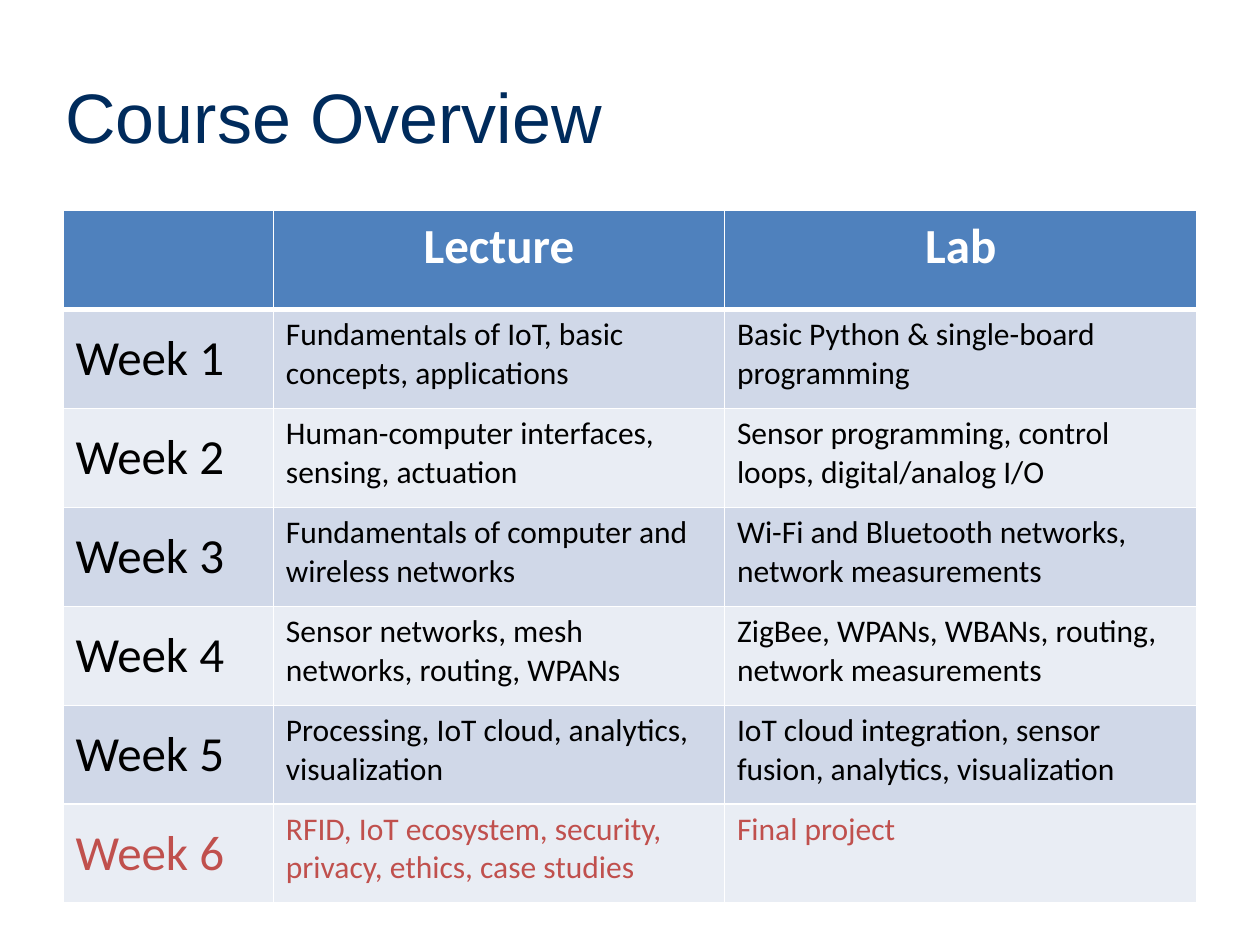
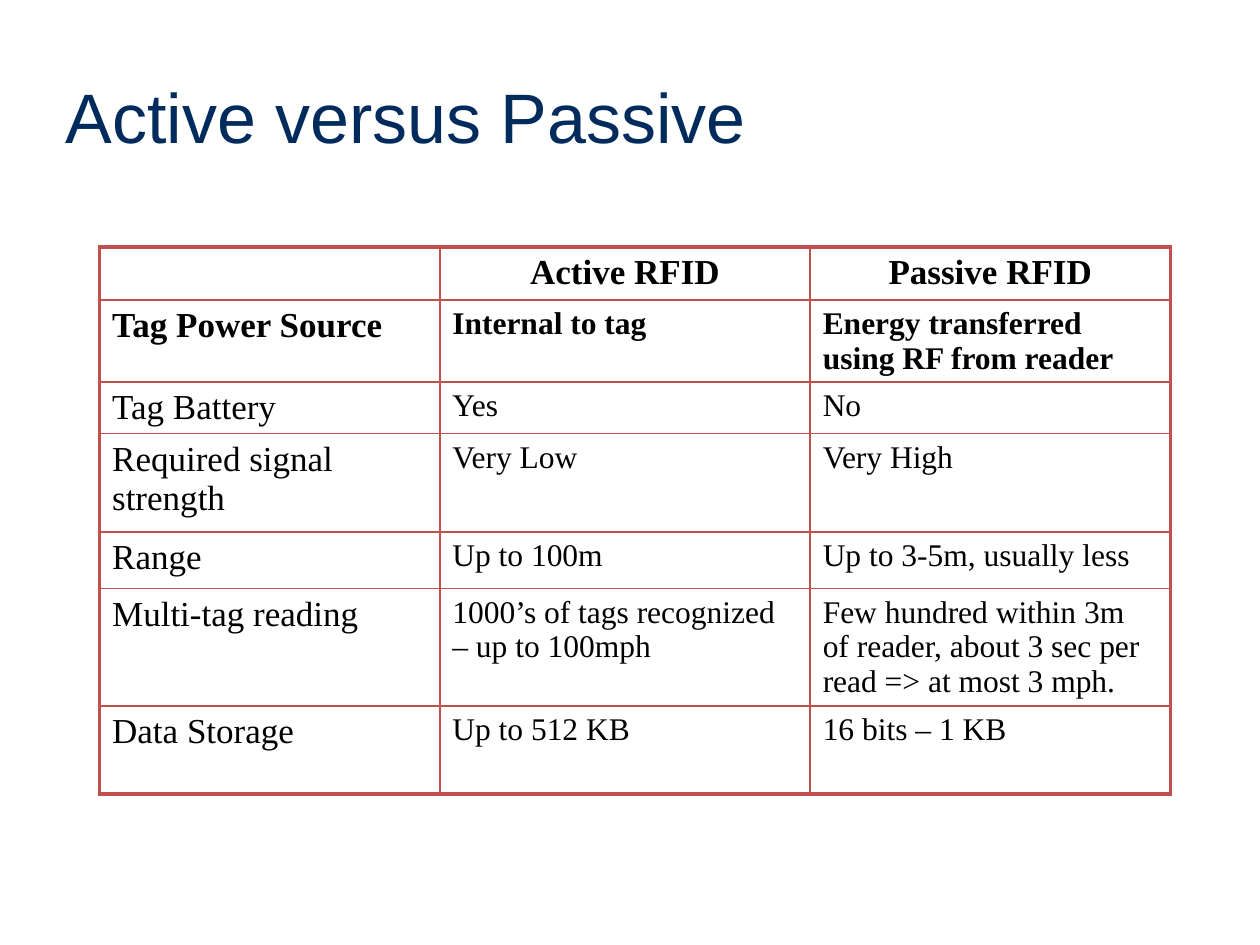
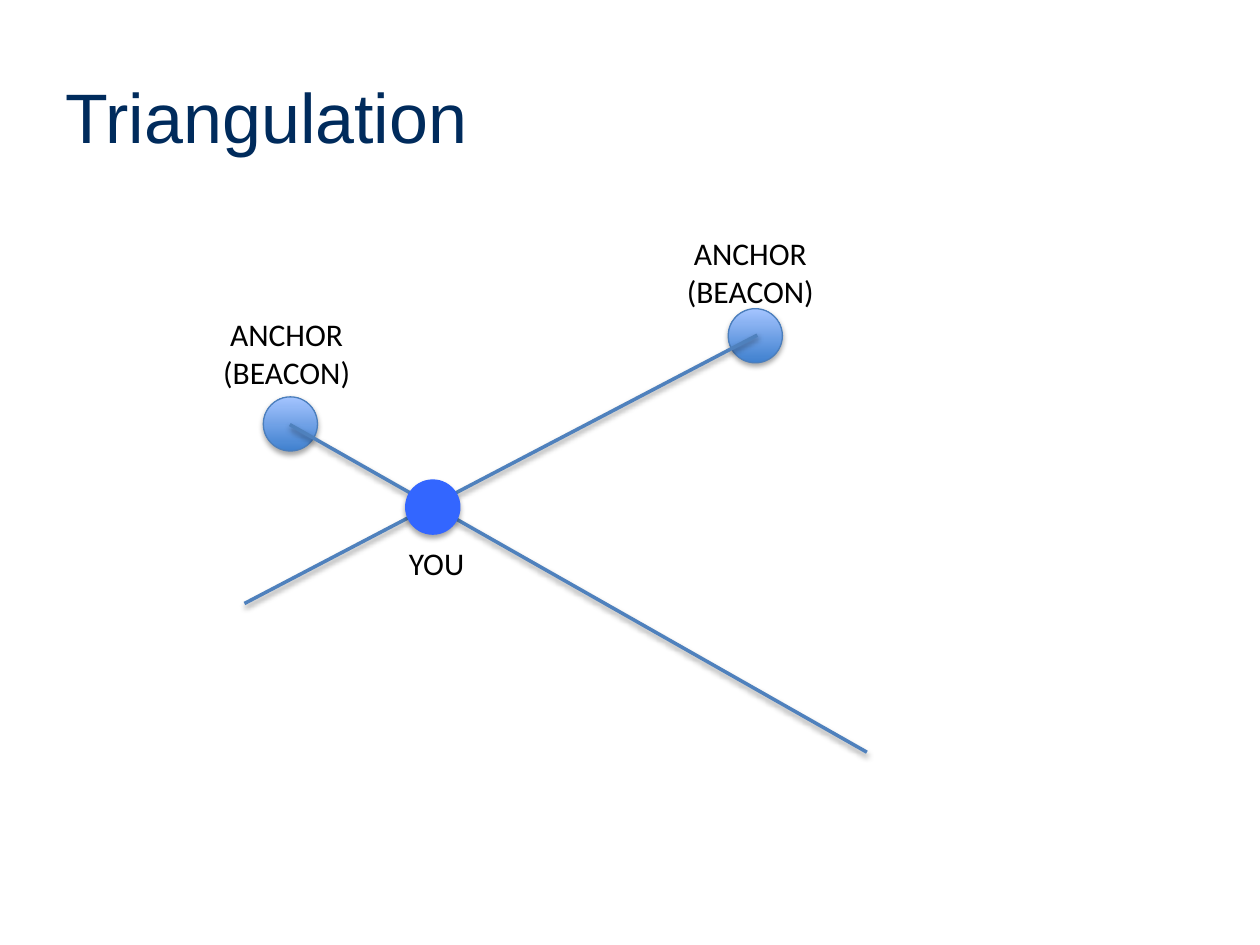
from dataclasses import dataclass

from lxml.etree import SubElement
from pptx import Presentation
from pptx.dml.color import RGBColor
from pptx.enum.shapes import MSO_CONNECTOR, MSO_SHAPE
from pptx.enum.text import MSO_ANCHOR, MSO_AUTO_SIZE, PP_ALIGN
from pptx.oxml.ns import qn
from pptx.util import Inches, Pt

COLORS = {
    "title": "002B5C",
    "text": "000000",
    "white": "FFFFFF",
    "accent": "4F81BD",
    "highlight": "C0504D",
    "band_dark": "D0D8E8",
    "band_light": "E9EDF4",
    "beacon_bottom": "3F80CE",
    "beacon_top": "A4C4FF",
    "beacon_line": "4B7EBC",
    "you": "3366FF",
}
TITLE_ONLY = 5
DOT_SIZE = 0.43

OVERVIEW = [
    ("", "Lecture", "Lab"),
    ("Week 1", "Fundamentals of IoT, basic concepts, applications",
     "Basic Python & single-board programming"),
    ("Week 2", "Human-computer interfaces, sensing, actuation",
     "Sensor programming, control loops, digital/analog I/O"),
    ("Week 3", "Fundamentals of computer and wireless networks",
     "Wi-Fi and Bluetooth networks, network measurements"),
    ("Week 4", "Sensor networks, mesh networks, routing, WPANs",
     "ZigBee, WPANs, WBANs, routing, network measurements"),
    ("Week 5", "Processing, IoT cloud, analytics, visualization",
     "IoT cloud integration, sensor fusion, analytics, visualization"),
    ("Week 6", "RFID, IoT ecosystem, security, privacy, ethics, case studies",
     "Final project"),
]
COMPARISON = [
    ("", "Active RFID", "Passive RFID"),
    ("Tag Power Source", "Internal to tag", "Energy transferred using RF from reader"),
    ("Tag Battery", "Yes", "No"),
    ("Required signal strength", "Very Low", "Very High"),
    ("Range", "Up to 100m", "Up to 3-5m, usually less"),
    ("Multi-tag reading", "1000’s of tags recognized – up to 100mph",
     "Few hundred within 3m of reader, about 3 sec per read => at most 3 mph."),
    ("Data Storage", "Up to 512 KB", "16 bits – 1 KB"),
]


@dataclass
class TableDesign:
    left: float
    top: float
    columns: list[float]
    rows: list[float]
    font: str
    heading_size: int
    border: str
    outer_width: float
    header_rule: float
    bold_rows: int
    label_anchor: MSO_ANCHOR
    header_text: str = "text"
    header_fill: str | None = None
    bands: tuple[str, ...] = ()
    highlighted_row: int | None = None


@dataclass
class Beacon:
    left: float
    top: float
    label_left: float
    label_top: float
    line_start: tuple[float, float]
    line_end: tuple[float, float]


OVERVIEW_DESIGN = TableDesign(
    left=0.5, top=1.67, columns=[1.67, 3.58, 3.75], rows=[5.5 / 7] * 7,
    font="Calibri", heading_size=28, border="white", outer_width=1,
    header_rule=3, bold_rows=1, label_anchor=MSO_ANCHOR.MIDDLE,
    header_text="white", header_fill="accent",
    bands=("band_dark", "band_light"), highlighted_row=6,
)
COMPARISON_DESIGN = TableDesign(
    left=0.79, top=1.96, columns=[2.7, 2.94, 2.86],
    rows=[0.42, 0.65, 0.37, 0.78, 0.45, 0.93, 0.7],
    font="Times New Roman", heading_size=20, border="highlight", outer_width=2.25,
    header_rule=1, bold_rows=2, label_anchor=MSO_ANCHOR.TOP,
)
BEACONS = [
    Beacon(2.09, 3.15, 1.55, 2.45, (2.3, 3.37), (6.88, 5.97)),
    Beacon(5.78, 2.45, 5.23, 1.81, (1.94, 4.79), (6.01, 2.66)),
]


def color(name: str) -> RGBColor:
    return RGBColor.from_string(COLORS[name])


def write(paragraph, text: str, size: float, font: str, color_name: str,
          bold: bool = False, align=PP_ALIGN.LEFT) -> None:
    paragraph.alignment = align
    run = paragraph.add_run()
    run.text = text
    run.font.size = Pt(size)
    run.font.name = font
    run.font.bold = bold
    run.font.color.rgb = color(color_name)


def add_titled_slide(presentation, text: str):
    slide = presentation.slides.add_slide(presentation.slide_layouts[TITLE_ONLY])
    title = slide.shapes.title
    title.left, title.top = Inches(0.42), Inches(0.42)
    title.width, title.height = Inches(9.08), Inches(1)
    title.text_frame.vertical_anchor = MSO_ANCHOR.MIDDLE
    write(title.text_frame.paragraphs[0], text, 40, "Arial", "title")
    return slide


def set_borders(cell, color_name: str, widths: dict[str, float]) -> None:
    properties = cell._tc.get_or_add_tcPr()
    for side, width in widths.items():
        line = SubElement(properties, qn(f"a:ln{side}"), w=str(Pt(width)))
        fill = SubElement(line, qn("a:solidFill"))
        SubElement(fill, qn("a:srgbClr"), val=COLORS[color_name])


def style_cell(cell, row: int, column: int, design: TableDesign) -> None:
    last_row, last_column = len(design.rows) - 1, len(design.columns) - 1
    top_width = design.header_rule if row == 1 else 1
    bottom_width = design.header_rule if row == 0 else 1
    set_borders(cell, design.border, {
        "L": design.outer_width if column == 0 else 1,
        "R": design.outer_width if column == last_column else 1,
        "T": design.outer_width if row == 0 else top_width,
        "B": design.outer_width if row == last_row else bottom_width,
    })
    fill_name = design.header_fill
    if row > 0 and design.bands:
        fill_name = design.bands[(row - 1) % len(design.bands)]
    if fill_name:
        cell.fill.solid()
        cell.fill.fore_color.rgb = color(fill_name)
    else:
        cell.fill.background()
    if row > 0 and column == 0:
        cell.vertical_anchor = design.label_anchor


def add_styled_table(slide, content: list[tuple[str, ...]], design: TableDesign) -> None:
    table = slide.shapes.add_table(
        len(design.rows), len(design.columns), Inches(design.left), Inches(design.top),
        Inches(sum(design.columns)), Inches(sum(design.rows))).table
    table.first_row = table.horz_banding = False
    for table_column, width in zip(table.columns, design.columns):
        table_column.width = Inches(width)
    for table_row, height in zip(table.rows, design.rows):
        table_row.height = Inches(height)
    for row, texts in enumerate(content):
        text_color = design.header_text if row == 0 else "text"
        if row == design.highlighted_row:
            text_color = "highlight"
        for column, text in enumerate(texts):
            cell = table.cell(row, column)
            style_cell(cell, row, column, design)
            if text:
                size = design.heading_size if row == 0 or column == 0 else 18
                write(cell.text_frame.paragraphs[0], text, size, design.font, text_color,
                      row < design.bold_rows,
                      PP_ALIGN.CENTER if row == 0 else PP_ALIGN.LEFT)


def add_shadow(shape, opacity: int, distance: float) -> None:
    """Give a shape or connector a soft shadow below; call after its line is set."""
    effects = SubElement(shape._element.spPr, qn("a:effectLst"))
    shadow = SubElement(effects, qn("a:outerShdw"), blurRad=str(Pt(3.1)),
                        dist=str(Pt(distance)), dir="5400000", rotWithShape="0")
    shade = SubElement(shadow, qn("a:srgbClr"), val="000000")
    SubElement(shade, qn("a:alpha"), val=str(opacity * 1000))


def add_dot(slide, left: float, top: float, line: str, fills: list[str]) -> None:
    """Draw a round marker, filled plainly or from bottom to top."""
    dot = slide.shapes.add_shape(MSO_SHAPE.OVAL, Inches(left), Inches(top),
                                 Inches(DOT_SIZE), Inches(DOT_SIZE))
    if len(fills) == 1:
        dot.fill.solid()
        dot.fill.fore_color.rgb = color(fills[0])
    else:
        dot.fill.gradient()
        dot.fill.gradient_angle = 90
        for stop, name in zip(dot.fill.gradient_stops, fills):
            stop.color.rgb = color(name)
    dot.line.color.rgb = color(line)
    dot.line.width = Pt(0.75)
    add_shadow(dot, 35, 1.8)


def add_label(slide, left: float, top: float, width: float, height: float,
              lines: list[str]) -> None:
    box = slide.shapes.add_textbox(Inches(left), Inches(top), Inches(width), Inches(height))
    frame = box.text_frame
    frame.word_wrap = False
    frame.auto_size = MSO_AUTO_SIZE.SHAPE_TO_FIT_TEXT
    for index, text in enumerate(lines):
        paragraph = frame.add_paragraph() if index else frame.paragraphs[0]
        write(paragraph, text, 18, "Calibri", "text", align=PP_ALIGN.CENTER)


def add_beacon(slide, beacon: Beacon) -> None:
    add_dot(slide, beacon.left, beacon.top, "beacon_line", ["beacon_bottom", "beacon_top"])
    add_label(slide, beacon.label_left, beacon.label_top, 1.45, 0.71, ["ANCHOR", "(BEACON)"])
    ends = [Inches(value) for value in beacon.line_start + beacon.line_end]
    sight_line = slide.shapes.add_connector(MSO_CONNECTOR.STRAIGHT, *ends)
    sight_line.line.color.rgb = color("accent")
    sight_line.line.width = Pt(2)
    add_shadow(sight_line, 38, 1.6)


def main() -> None:
    presentation = Presentation()
    presentation.slide_width, presentation.slide_height = Inches(10), Inches(7.5)

    add_styled_table(add_titled_slide(presentation, "Course Overview"),
                     OVERVIEW, OVERVIEW_DESIGN)
    add_styled_table(add_titled_slide(presentation, "Active versus Passive"),
                     COMPARISON, COMPARISON_DESIGN)

    triangulation = add_titled_slide(presentation, "Triangulation")
    for beacon in BEACONS:
        add_beacon(triangulation, beacon)
    add_dot(triangulation, 3.22, 3.81, "you", ["you"])
    add_label(triangulation, 3.09, 4.27, 0.75, 0.4, ["YOU"])

    presentation.save("out.pptx")


if __name__ == "__main__":
    main()
